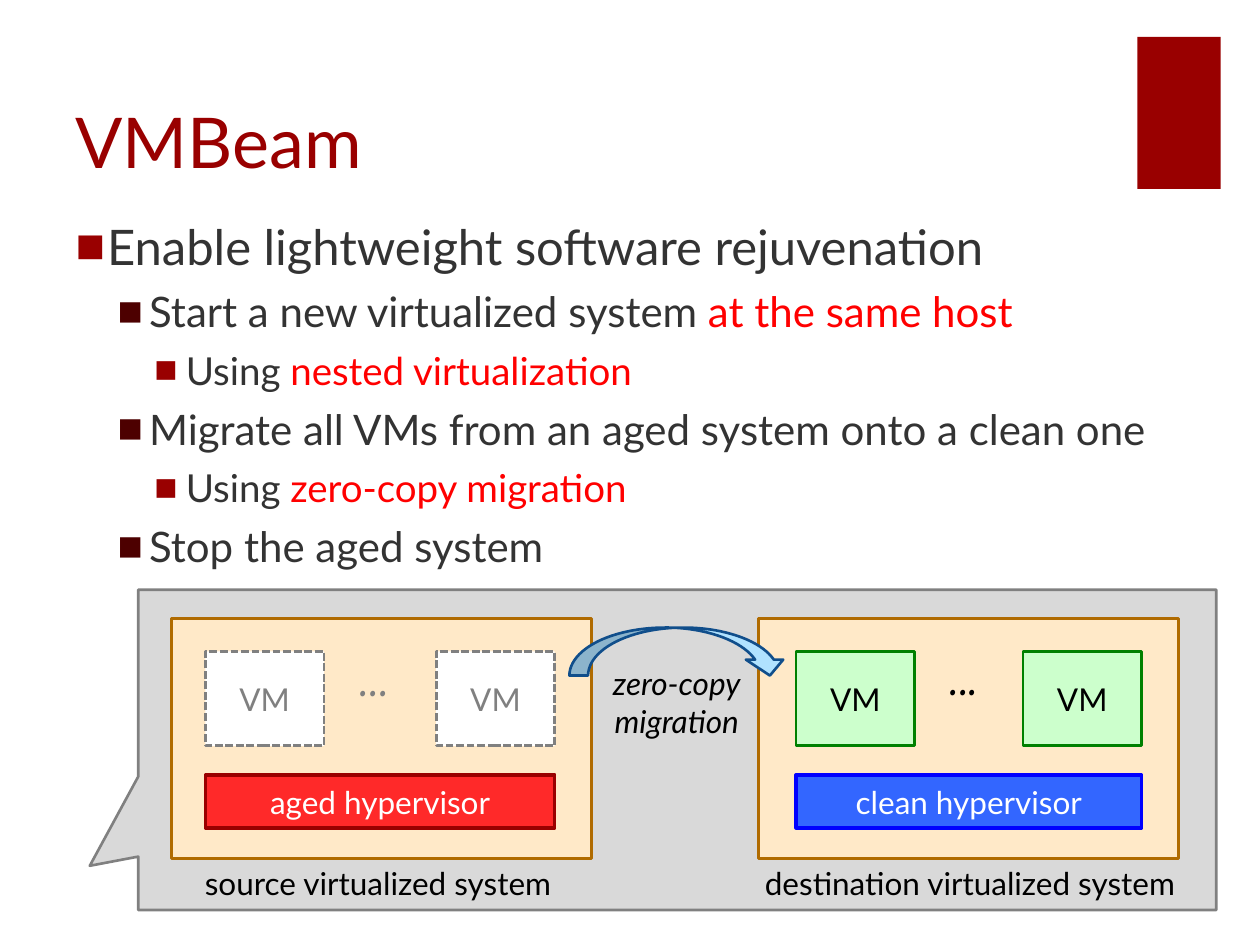
from lxml.etree import SubElement
from pptx import Presentation
from pptx.dml.color import RGBColor
from pptx.enum.dml import MSO_LINE
from pptx.enum.shapes import MSO_SHAPE
from pptx.enum.text import MSO_ANCHOR, MSO_AUTO_SIZE, PP_ALIGN
from pptx.oxml.ns import qn
from pptx.util import Pt

DARK_RED, RED, TEXT, GRAY = "990000", "FF0000", "333333", "808080"
BLACK, WHITE = "000000", "FFFFFF"

# level -> (text size, left margin, bullet colour)
LEVELS = [(28, 18, DARK_RED), (24, 42, "4D0000"), (22, 63, DARK_RED)]

# (level, plain text, highlighted text)
BULLETS = [
    (0, "Enable lightweight software rejuvenation", ""),
    (1, "Start a new virtualized system ", "at the same host"),
    (2, "Using ", "nested virtualization"),
    (1, "Migrate all VMs from an aged system onto a clean one", ""),
    (2, "Using ", "zero-copy migration"),
    (1, "Stop the aged system", ""),
]


def rgb(value):
    return RGBColor.from_string(value)


def add_text(p, text, size=18, color=BLACK, font="Lato", italic=False, align=None):
    """Append a formatted run to a paragraph."""
    if align is not None:
        p.alignment = align
    r = p.add_run()
    r.text = text
    r.font.size = Pt(size)
    r.font.name = font
    r.font.italic = italic
    r.font.color.rgb = rgb(color)


def place(sp, left, top, width, height):
    sp.left, sp.top, sp.width, sp.height = Pt(left), Pt(top), Pt(width), Pt(height)


def add_shape(slide, box, fill, line=None, weight=1.5, kind=MSO_SHAPE.RECTANGLE,
              adjust=(), dash=None, text="", color=BLACK):
    sp = slide.shapes.add_shape(kind, *map(Pt, box))
    sp.shadow.inherit = False
    for i, value in enumerate(adjust):
        sp.adjustments[i] = value
    sp.fill.solid()
    sp.fill.fore_color.rgb = rgb(fill)
    if line:
        sp.line.color.rgb = rgb(line)
        sp.line.width = Pt(weight)
        if dash:
            sp.line.dash_style = dash
    else:
        sp.line.fill.background()
    if text:
        tf = sp.text_frame
        tf.vertical_anchor = MSO_ANCHOR.MIDDLE
        add_text(tf.paragraphs[0], text, color=color, align=PP_ALIGN.CENTER)


def add_label(slide, box, lines, **fmt):
    tf = slide.shapes.add_textbox(*map(Pt, box)).text_frame
    tf.word_wrap = False
    tf.auto_size = MSO_AUTO_SIZE.SHAPE_TO_FIT_TEXT
    for i, line in enumerate(lines):
        p = tf.add_paragraph() if i else tf.paragraphs[0]
        add_text(p, line, **fmt)


def set_bullet(p, margin, color):
    pPr = p._p.get_or_add_pPr()
    pPr.set("marL", str(Pt(margin)))
    pPr.set("indent", str(-Pt(18)))
    clr = SubElement(pPr, qn("a:buClr"))
    SubElement(clr, qn("a:srgbClr")).set("val", color)
    SubElement(pPr, qn("a:buChar")).set("char", "■")


def fill_title(sp):
    place(sp, 36, 18, 606, 90)
    tf = sp.text_frame
    tf.vertical_anchor = MSO_ANCHOR.BOTTOM
    tf.auto_size = MSO_AUTO_SIZE.NONE
    add_text(tf.paragraphs[0], "VMBeam", size=40, color=DARK_RED, align=PP_ALIGN.LEFT)


def fill_body(sp):
    place(sp, 36, 120, 642, 380)
    tf = sp.text_frame
    tf.auto_size = MSO_AUTO_SIZE.NONE
    for i, (level, plain, marked) in enumerate(BULLETS):
        size, margin, color = LEVELS[level]
        p = tf.add_paragraph() if i else tf.paragraphs[0]
        p.level = level
        p.space_before = Pt(6)
        set_bullet(p, margin, color)
        add_text(p, plain, size=size, color=TEXT)
        if marked:
            add_text(p, marked, size=size, color=RED)


def add_system(slide, left, inner, width, dots, hypervisor, bar, vm):
    """Draw a host frame holding two VMs above a hypervisor bar."""
    vm_width = 67.7
    add_shape(slide, (left, 353.5, 240, 137), "FFE9C8", "B06B00")
    add_shape(slide, (inner, 442.8, width, 30.4), *bar, weight=2,
              text=hypervisor, color=WHITE)
    for x in (inner, inner + width - vm_width):
        add_shape(slide, (x, 372.2, vm_width, 54), text="VM", **vm)
    add_label(slide, (*dots, 41.8, 51), ["..."], size=36, font="Comic Neue",
              color=vm["color"])


def main():
    prs = Presentation()
    prs.slide_width, prs.slide_height = Pt(720), Pt(540)
    slide = prs.slides.add_slide(prs.slide_layouts[1])
    add_shape(slide, (650, 21, 47.5, 87), DARK_RED)
    fill_title(slide.shapes.title)
    fill_body(slide.placeholders[1])

    add_shape(slide, (79, 337, 616, 183), "D9D9D9", GRAY,
              kind=MSO_SHAPE.RECTANGULAR_CALLOUT, adjust=(-0.545, 0.362))
    add_system(slide, 98, 117.4, 199.6, (198, 358.6), "aged hypervisor",
               ("FF2929", DARK_RED),
               dict(fill=WHITE, line=GRAY, dash=MSO_LINE.SQUARE_DOT, color=GRAY))
    add_system(slide, 433.5, 455, 197.3, (535, 357.8), "clean hypervisor",
               ("3366FF", "0000FF"),
               dict(fill="CCFFCC", line="008000", color=BLACK))
    add_label(slide, (110, 490.3, 216, 29), ["source virtualized system"])
    add_label(slide, (430, 490.3, 251, 29), ["destination virtualized system"])
    add_label(slide, (337.7, 375.8, 98, 51), ["zero-copy", "migration"],
              italic=True, align=PP_ALIGN.CENTER)
    add_shape(slide, (325.4, 358.6, 125.3, 27.4), "B0E2FF", "104E8B",
              kind=MSO_SHAPE.CURVED_DOWN_ARROW, adjust=(0.391, 0.78, 0.331))
    prs.save("out.pptx")


if __name__ == "__main__":
    main()
